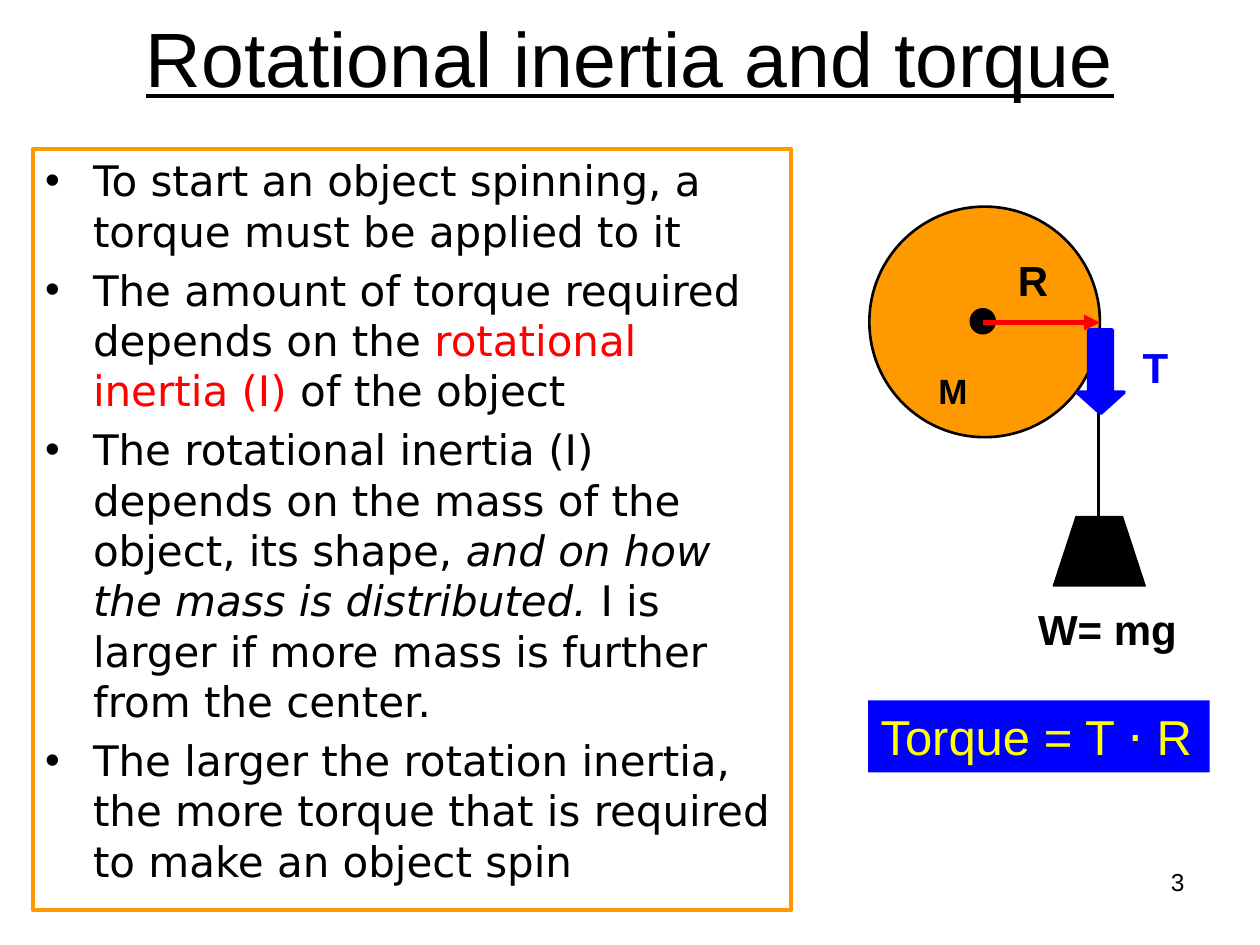
from lxml import etree
from pptx import Presentation
from pptx import util as u
from pptx.dml.color import RGBColor
from pptx.enum import shapes, text
from pptx.oxml import ns

COLORS = {
    "black": "000000",
    "orange": "FF9900",
    "red": "FF0000",
    "blue": "0000FF",
    "yellow": "FFFF00",
}

BULLETS = [
    [("To start an object spinning, a torque must be applied to it", {})],
    [
        ("The amount of torque required depends on the ", {}),
        ("rotational inertia (I)", {"color": "red"}),
        (" of the object", {}),
    ],
    [
        ("The rotational inertia (I) depends on the mass of the object, its shape, ", {}),
        ("and on how the mass is distributed. ", {"italic": True}),
        ("I is larger if more mass is further from the center.", {}),
    ],
    [("The larger the rotation inertia, the more torque that is required to make an object spin", {})],
]


def rgb(name):
    return RGBColor.from_string(COLORS[name])


def add_span(para, words, size, color="black", font="Arial", **style):
    span = para.add_run()
    span.text = words
    span.font.size = u.Pt(size)
    span.font.name = font
    span.font.color.rgb = rgb(color)
    for key, value in style.items():
        setattr(span.font, key, value)


def paint(shape, fill=None, line=None, width=0.75):
    shape.shadow.inherit = False
    if fill:
        shape.fill.solid()
        shape.fill.fore_color.rgb = rgb(fill)
    else:
        shape.fill.background()
    if line:
        shape.line.color.rgb = rgb(line)
        shape.line.width = u.Pt(width)
    else:
        shape.line.fill.background()


def add_figure(page, kind, area, **colors):
    figure = page.shapes.add_shape(kind, *map(u.Inches, area))
    paint(figure, **colors)
    return figure


def add_label(page, area, words, size, align=text.PP_ALIGN.LEFT,
              anchor=text.MSO_ANCHOR.TOP, wrap=False, **style):
    box = page.shapes.add_textbox(*map(u.Inches, area))
    frame = box.text_frame
    frame.word_wrap = wrap
    frame.vertical_anchor = anchor
    para = frame.paragraphs[0]
    para.alignment = align
    add_span(para, words, size, **style)
    return box


def add_line(page, start, end, color, width, arrow=False):
    line = page.shapes.add_connector(
        shapes.MSO_CONNECTOR.STRAIGHT, *map(u.Inches, start + end))
    line.line.color.rgb = rgb(color)
    line.line.width = u.Pt(width)
    if arrow:
        etree.SubElement(line.line._get_or_add_ln(), ns.qn("a:tailEnd"), type="triangle")
    etree.SubElement(line._element.spPr, ns.qn("a:effectLst"))


def add_bullets(page, area, items):
    box = add_figure(page, shapes.MSO_SHAPE.RECTANGLE, area, line="orange", width=2.25)
    frame = box.text_frame
    frame.word_wrap = True
    frame.vertical_anchor = text.MSO_ANCHOR.TOP
    for index, spans in enumerate(items):
        para = frame.add_paragraph() if index else frame.paragraphs[0]
        para.alignment = text.PP_ALIGN.LEFT
        para.space_before = u.Pt(4.8)
        properties = para._p.get_or_add_pPr()
        properties.set("marL", str(u.Inches(0.38)))
        properties.set("indent", str(u.Inches(-0.38)))
        etree.SubElement(properties, ns.qn("a:buFont"), typeface="Arial")
        etree.SubElement(properties, ns.qn("a:buChar"), char="•")
        for words, style in spans:
            add_span(para, words, 24, font="DejaVu Sans", **style)


def add_weight(page):
    add_line(page, (8.72, 2.55), (8.72, 4.14), "black", 1.5)
    builder = page.shapes.build_freeform(u.Inches(9.09), u.Inches(4.65))
    corners = [(8.91, 4.1), (8.54, 4.1), (8.36, 4.65)]
    builder.add_line_segments([(u.Inches(x), u.Inches(y)) for x, y in corners], close=True)
    paint(builder.convert_to_shape(), fill="black", line="black")
    add_label(page, (8.14, 4.74, 1.3, 0.5), "W= mg", 24, bold=True)


def add_wheel(page):
    oval = shapes.MSO_SHAPE.OVAL
    add_figure(page, oval, (6.9, 1.64, 1.83, 1.83), fill="orange", line="black", width=1.5)
    add_figure(page, oval, (7.7, 2.45, 0.2, 0.2), fill="black", line="black")
    add_line(page, (7.8, 2.56), (8.73, 2.56), "red", 3, arrow=True)
    add_label(page, (7.98, 1.97, 0.44, 0.5), "R", 24, bold=True)
    add_label(page, (7.35, 2.88, 0.43, 0.43), "M", 20, bold=True)


def add_tension(page):
    arrow = add_figure(page, shapes.MSO_SHAPE.DOWN_ARROW, (8.55, 2.62, 0.37, 0.66),
                       fill="blue", line="blue", width=2.25)
    arrow.adjustments[1] = 0.45
    add_label(page, (8.97, 2.66, 0.4, 0.5), "T", 24, wrap=True, color="blue", bold=True)


def main():
    deck = Presentation()
    deck.slide_width, deck.slide_height = u.Inches(10), u.Inches(7.5)
    page = deck.slides.add_slide(deck.slide_layouts[6])
    add_label(page, (0, 0, 10, 0.9), "Rotational inertia and torque", 44,
              text.PP_ALIGN.CENTER, text.MSO_ANCHOR.MIDDLE, wrap=True, underline=True)
    add_bullets(page, (0.26, 1.18, 6.02, 6.04), BULLETS)
    add_weight(page)
    formula = add_label(page, (6.89, 5.56, 2.71, 0.57), "Torque = T ⋅ R", 28, color="yellow")
    paint(formula, fill="blue")
    add_wheel(page)
    add_tension(page)
    add_label(page, (7.17, 6.83, 2.33, 0.52), "3", 14, text.PP_ALIGN.RIGHT, wrap=True)
    deck.save("out.pptx")


if __name__ == "__main__":
    main()
